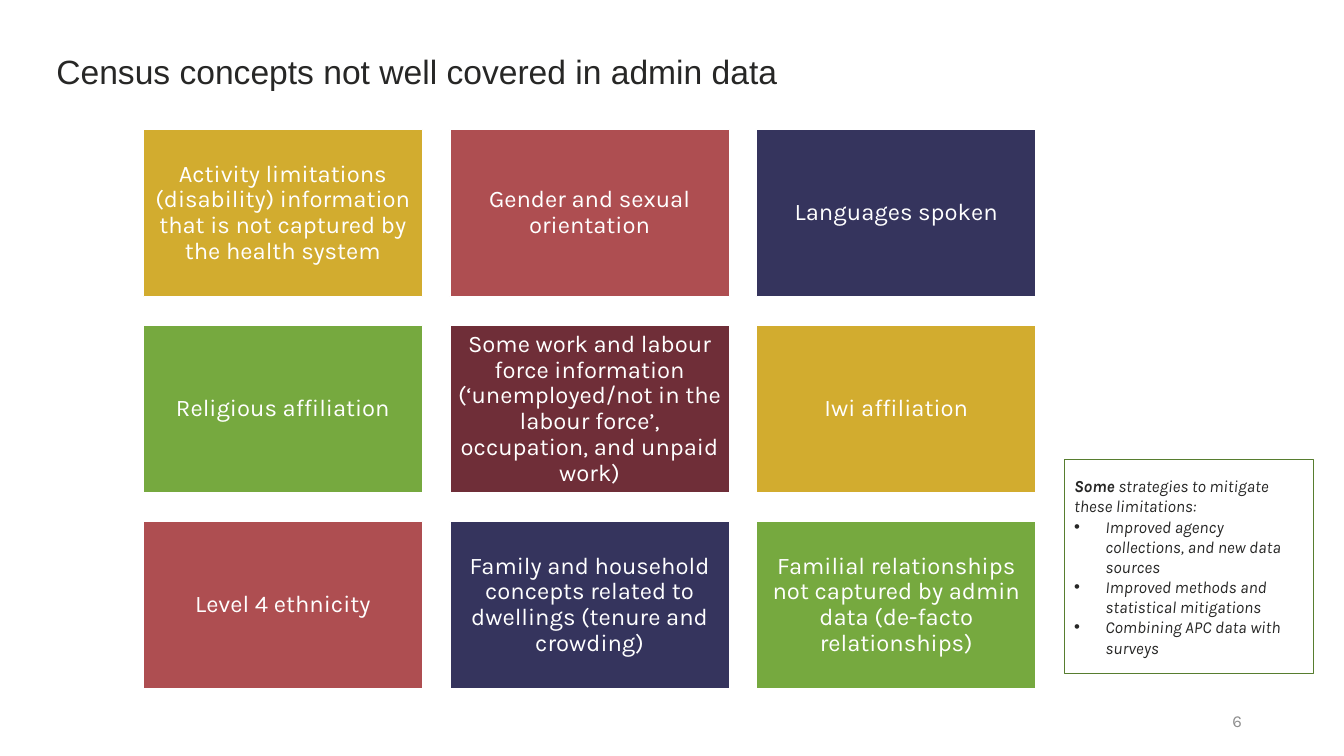
"""Build a slide on census concepts that admin data does not cover well."""
from dataclasses import dataclass

import lxml.etree
import pptx
import pptx.dml.color
import pptx.enum.shapes
import pptx.enum.text
import pptx.oxml.ns
import pptx.util

Cm = pptx.util.Cm
Pt = pptx.util.Pt
Align = pptx.enum.text.PP_ALIGN
Anchor = pptx.enum.text.MSO_ANCHOR

GOLD, RED, NAVY = "D2AC2F", "AE4E51", "35345D"
GREEN, MAROON, WHITE = "76A93F", "6F2E38", "FFFFFF"
INK, GREY, MOSS = "272726", "8E8E8E", "577D2F"

COLUMNS = 3
GRID_LEFT, GRID_TOP = 3.61, 3.26
TILE_WIDTH, TILE_HEIGHT = 7.04, 4.22
COLUMN_STEP, ROW_STEP = 7.73, 4.94


@dataclass
class Concept:
    name: str
    color: str


@dataclass
class Area:
    left: float
    top: float
    width: float
    height: float

    def lengths(self) -> list:
        return [Cm(n) for n in (self.left, self.top, self.width, self.height)]


CONCEPTS = [
    Concept("Activity limitations (disability) information that is not captured "
            "by the health system", GOLD),
    Concept("Gender and sexual orientation", RED),
    Concept("Languages spoken", NAVY),
    Concept("Religious affiliation", GREEN),
    Concept("Some work and labour force information (‘unemployed/not in the "
            "labour force’, occupation, and unpaid work)", MAROON),
    Concept("Iwi affiliation", GOLD),
    Concept("Level 4 ethnicity", RED),
    Concept("Family and household concepts related to dwellings "
            "(tenure and crowding)", NAVY),
    Concept("Familial relationships not captured by admin data "
            "(de-facto relationships)", GREEN),
]

STRATEGIES = [
    "Improved agency collections, and new data sources",
    "Improved methods and statistical mitigations",
    "Combining APC data with surveys",
]


def rgb(color: str):
    return pptx.dml.color.RGBColor.from_string(color)


def style(paragraph, size: float, color: str, face: str = "Karla",
          align=Align.LEFT) -> None:
    paragraph.alignment = align
    paragraph.font.name = face
    paragraph.font.size = Pt(size)
    paragraph.font.color.rgb = rgb(color)


def add_label(slide, area: Area, text: str, size: float, color: str,
              face: str = "Karla", align=Align.LEFT, anchor=Anchor.TOP) -> None:
    frame = slide.shapes.add_textbox(*area.lengths()).text_frame
    frame.word_wrap = True
    frame.vertical_anchor = anchor
    frame.text = text
    style(frame.paragraphs[0], size, color, face, align)


def add_box(slide, area: Area, outline: str):
    box = slide.shapes.add_shape(
        pptx.enum.shapes.MSO_SHAPE.RECTANGLE, *area.lengths())
    box.shadow.inherit = False
    box.line.color.rgb = rgb(outline)
    box.line.width = Pt(1)
    box.text_frame.word_wrap = True
    box.text_frame.vertical_anchor = Anchor.MIDDLE
    return box


def add_tile(slide, concept: Concept, index: int) -> None:
    row, column = divmod(index, COLUMNS)
    tile = add_box(slide, Area(GRID_LEFT + column * COLUMN_STEP,
                               GRID_TOP + row * ROW_STEP,
                               TILE_WIDTH, TILE_HEIGHT), WHITE)
    tile.fill.solid()
    tile.fill.fore_color.rgb = rgb(concept.color)
    frame = tile.text_frame
    frame.margin_left = frame.margin_right = Cm(0.17)
    frame.margin_top = frame.margin_bottom = Cm(0.17)
    frame.text = concept.name
    frame.paragraphs[0].line_spacing = 0.9
    style(frame.paragraphs[0], 17, WHITE, align=Align.CENTER)


def add_bullet(paragraph) -> None:
    properties = paragraph._p.get_or_add_pPr()
    properties.set("marL", str(Cm(0.79)))
    properties.set("indent", str(-Cm(0.79)))
    for tag, key, value in (("a:buFont", "typeface", "Arial"),
                            ("a:buChar", "char", "•")):
        lxml.etree.SubElement(properties, pptx.oxml.ns.qn(tag)).set(key, value)


def add_strategies(slide) -> None:
    note = add_box(slide, Area(26.82, 11.58, 6.28, 5.4), MOSS)
    note.fill.background()
    intro = note.text_frame.paragraphs[0]
    emphasis = intro.add_run()
    emphasis.text = "Some"
    emphasis.font.bold = True
    intro.add_run().text = " strategies to mitigate these limitations:"
    for strategy in STRATEGIES:
        paragraph = note.text_frame.add_paragraph()
        paragraph.text = strategy
        add_bullet(paragraph)
    for paragraph in note.text_frame.paragraphs:
        style(paragraph, 12, INK)
        paragraph.font.italic = True


def main() -> None:
    deck = pptx.Presentation()
    deck.slide_width, deck.slide_height = Cm(33.87), Cm(19.05)
    slide = deck.slides.add_slide(deck.slide_layouts[6])
    add_label(slide, Area(1.17, 1.17, 25.93, 2.62),
              "Census concepts not well covered in admin data", 24, INK, "Arial")
    add_label(slide, Area(23.93, 17.65, 7.62, 1.02), "6", 12, GREY,
              align=Align.RIGHT, anchor=Anchor.MIDDLE)
    add_strategies(slide)
    for index, concept in enumerate(CONCEPTS):
        add_tile(slide, concept, index)
    deck.save("out.pptx")


if __name__ == "__main__":
    main()
